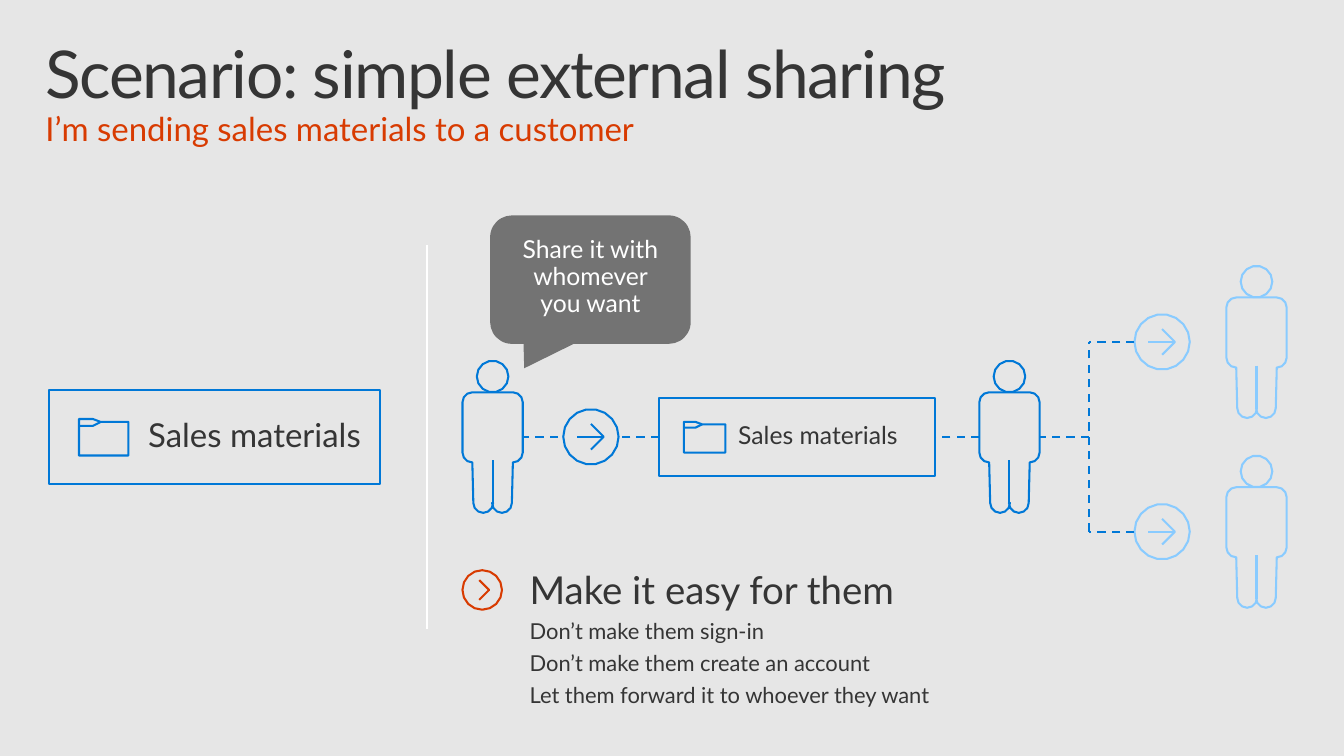
from math import cos, radians, sin

from lxml import etree
from pptx import Presentation
from pptx.dml.color import RGBColor
from pptx.enum.dml import MSO_LINE
from pptx.enum.shapes import MSO_CONNECTOR, MSO_SHAPE
from pptx.enum.text import MSO_ANCHOR, PP_ALIGN
from pptx.oxml.ns import qn
from pptx.util import Inches, Pt

STRAIGHT, DASH = MSO_CONNECTOR.STRAIGHT, MSO_LINE.DASH
RECTANGLE, CALLOUT = MSO_SHAPE.RECTANGLE, MSO_SHAPE.ROUNDED_RECTANGULAR_CALLOUT
LEFT, CENTER = PP_ALIGN.LEFT, PP_ALIGN.CENTER
TOP, MIDDLE = MSO_ANCHOR.TOP, MSO_ANCHOR.MIDDLE
LEFT_SIDE, RIGHT_SIDE = 1, 3

FONT = "Lato"
BACKGROUND, WHITE, DARK, GRAY = "E6E6E6", "FFFFFF", "353535", "737373"
BLUE, PALE_BLUE, ORANGE = "0078D7", "89CBFF", "D83B01"

# Paragraphs are lists of runs: (text, size, colour, letter spacing in points)
TITLE = [[("Scenario: simple external sharing\v", 48, DARK, -1),
          ("I’m sending sales materials to a customer", 24, ORANGE, 0)]]
SPEECH = [[("Share it with whomever you want", 18, WHITE, 0)]]
BENEFITS = [[("Make it easy for them", 28, DARK, 0)]] + [
    [(line, 16, DARK, 0)] for line in (
        "Don’t make them sign-in",
        "Don’t make them create an account",
        "Let them forward it to whoever they want")]
FOLDER_LABEL = "Sales materials"

# Horizontal axes of the flow, in inches
FLOW = 4.42
BRANCH_STEP = 0.96
BRANCHES = (FLOW - BRANCH_STEP, FLOW + BRANCH_STEP)

# Folder boxes: left, width, height, text size, text inset, icon offset, icon scale
FOLDERS = ((0.5, 3.35, 0.95, 24, 1, 0.3, 1),
           (6.67, 2.79, 0.79, 18, 0.8, 0.25, 0.84))

PERSON_WIDTH, PERSON_RISE = 0.61, 0.77
SENDER, CUSTOMER, COLLEAGUE = 4.68, 9.91, 12.41
ARROW_RADIUS = 0.28
SEND_ARROW, FORWARD_ARROW = 5.98, 11.76
FORK = 11.02


def color(value):
    return RGBColor.from_string(value)


def arc(x, y, radius, start, end, steps):
    """Points along a circular arc; degrees run clockwise from the right."""
    angles = [radians(start + (end - start) * step / steps) for step in range(steps + 1)]
    return [(x + radius * cos(angle), y + radius * sin(angle)) for angle in angles]


def circle(x, y, radius, sides):
    return arc(x, y, radius, 0, 360, sides)[:-1], True


def person():
    middle = PERSON_WIDTH / 2
    right = (arc(0.51, 0.42, 0.1, -90, 0, 3) + arc(0.51, 0.93, 0.1, 0, 90, 3)
             + arc(0.4, 1.44, 0.1, 0, 180, 6))
    left = [(PERSON_WIDTH - x, y) for x, y in reversed(right)]
    return [circle(middle, 0.16, 0.16, 14),
            (right + left, True),
            ([(middle, 1.01), (middle, 1.45)], False)]


def circled_arrow():
    return [circle(0, 0, ARROW_RADIUS, 18),
            ([(0, 0.13), (0.13, 0), (0, -0.13)], False),
            ([(0.13, 0), (-0.14, 0)], False)]


def circled_chevron():
    return [circle(0, 0, 0.2, 16),
            ([(-0.03, 0.1), (0.07, 0), (-0.03, -0.1)], False)]


def folder():
    return [([(0, 0), (0.14, 0), (0.22, 0.03), (0.5, 0.03), (0.5, 0.37), (0, 0.37)], True),
            ([(0, 0.07), (0.14, 0.07), (0.22, 0.03)], False)]


def style(shape, line=None, fill=None):
    shape.shadow.inherit = False
    if fill:
        shape.fill.solid()
        shape.fill.fore_color.rgb = color(fill)
    else:
        shape.fill.background()
    if line:
        shape.line.color.rgb = color(line)
        shape.line.width = Pt(1.5)
    else:
        shape.line.fill.background()


def draw_icon(slide, contours, left, top, line, fill=None, scale=1):
    """Draws (points, closed) contours as one freeform placed at left, top."""
    builder = None
    for points, closed in contours:
        placed = [(Inches(left + x * scale), Inches(top + y * scale)) for x, y in points]
        if builder is None:
            builder = slide.shapes.build_freeform(*placed[0])
        else:
            builder.move_to(*placed[0])
        builder.add_line_segments(placed[1:], close=closed)
    style(builder.convert_to_shape(), line, fill)


def draw_line(slide, start, end, line=BLUE, dash=DASH):
    connector = slide.shapes.add_connector(STRAIGHT, *map(Inches, start + end))
    connector.line.color.rgb = color(line)
    connector.line.width = Pt(1.5)
    if dash:
        connector.line.dash_style = dash
    etree.SubElement(connector._element.spPr, qn("a:effectLst"))
    return connector


def write(shape, paragraphs, insets, align=LEFT, anchor=TOP, space_after=0):
    """Fills a shape with text; insets are left, top, right, bottom in inches."""
    frame = shape.text_frame
    left, top, right, bottom = map(Inches, insets)
    settings = {"word_wrap": True, "vertical_anchor": anchor, "margin_left": left,
                "margin_top": top, "margin_right": right, "margin_bottom": bottom}
    for name, value in settings.items():
        setattr(frame, name, value)
    for index, runs in enumerate(paragraphs):
        paragraph = frame.add_paragraph() if index else frame.paragraphs[0]
        layout = {"alignment": align, "line_spacing": 0.9, "space_after": Pt(space_after)}
        for name, value in layout.items():
            setattr(paragraph, name, value)
        for text, size, text_color, spacing in runs:
            run = paragraph.add_run()
            run.text = text.rstrip("\v")
            run.font.name, run.font.size = FONT, Pt(size)
            run.font.color.rgb = color(text_color)
            if spacing:
                run.font._element.set("spc", str(spacing * 100))
            if text.endswith("\v"):
                paragraph.add_line_break()


def add_text(slide, box, paragraphs, insets, space_after=0):
    write(slide.shapes.add_textbox(*map(Inches, box)), paragraphs, insets,
          space_after=space_after)


def add_folder_box(slide, left, width, height, size, inset, icon_offset, scale):
    draw_icon(slide, folder(), left + icon_offset, FLOW - 0.18 * scale, BLUE, scale=scale)
    box = slide.shapes.add_shape(
        RECTANGLE, *map(Inches, (left, FLOW - height / 2, width, height)))
    style(box, BLUE)
    write(box, [[(FOLDER_LABEL, size, DARK, 0)]], (inset, 0.16, 0.1, 0.16), anchor=MIDDLE)
    return box


def add_speech(slide):
    bubble = slide.shapes.add_shape(CALLOUT, *map(Inches, (4.96, 2.18, 2.03, 1.3)))
    for index, value in enumerate((-0.33, 0.69, 0.17)):
        bubble.adjustments[index] = value
    style(bubble, fill=GRAY)
    write(bubble, SPEECH, (0.2, 0.16, 0.2, 0.16), align=CENTER)


def add_flow(slide):
    shared_box = [add_folder_box(slide, *row) for row in FOLDERS][-1]
    box_left, box_width = FOLDERS[-1][:2]
    sending = draw_line(slide, (box_left, FLOW), (SENDER + PERSON_WIDTH, FLOW))
    sending.begin_connect(shared_box, LEFT_SIDE)
    receiving = draw_line(slide, (CUSTOMER, FLOW), (box_left + box_width, FLOW))
    receiving.end_connect(shared_box, RIGHT_SIDE)
    draw_line(slide, (FORK, FLOW), (CUSTOMER + PERSON_WIDTH, FLOW))
    draw_line(slide, (FORK, BRANCHES[1]), (FORK, BRANCHES[0]))
    for left in (SENDER, CUSTOMER):
        draw_icon(slide, person(), left, FLOW - PERSON_RISE, BLUE)
    draw_icon(slide, circled_arrow(), SEND_ARROW, FLOW, BLUE, BACKGROUND)
    for axis in BRANCHES:
        draw_icon(slide, circled_arrow(), FORWARD_ARROW, axis, PALE_BLUE)
        draw_icon(slide, person(), COLLEAGUE, axis - PERSON_RISE, PALE_BLUE)
        draw_line(slide, (FORWARD_ARROW - ARROW_RADIUS, axis), (FORK, axis))


def main():
    presentation = Presentation()
    presentation.slide_width, presentation.slide_height = Inches(13.6), Inches(7.65)
    slide = presentation.slides.add_slide(presentation.slide_layouts[6])
    slide.background.fill.solid()
    slide.background.fill.fore_color.rgb = color(BACKGROUND)
    add_text(slide, (0.3, 0.32, 13, 1), TITLE, (0.16, 0.1, 0.16, 0.1))
    add_speech(slide)
    add_text(slide, (5.16, 5.62, 4.5, 1.73), BENEFITS, (0.2, 0.16, 0.2, 0.16), space_after=6)
    draw_line(slide, (4.32, 2.48), (4.32, 6.37), WHITE, dash=None)
    add_flow(slide)
    draw_icon(slide, circled_chevron(), 4.88, 5.97, ORANGE)
    presentation.save("out.pptx")


if __name__ == "__main__":
    main()
